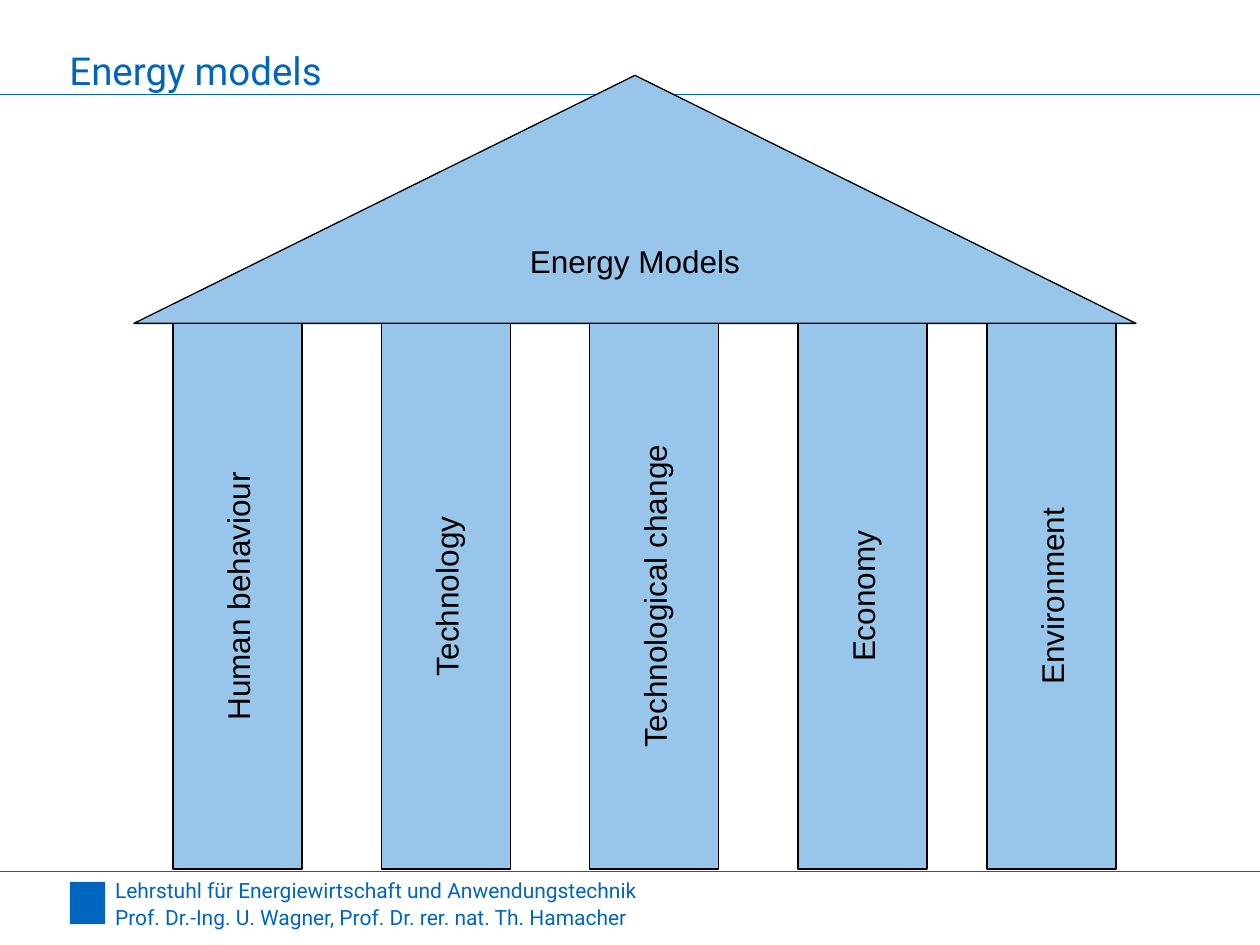
from dataclasses import dataclass

import pptx
import pptx.dml.color
import pptx.enum.shapes
import pptx.enum.text
import pptx.oxml
import pptx.oxml.ns
import pptx.util

Cm = pptx.util.Cm
Shapes = pptx.enum.shapes.MSO_SHAPE
Anchor = pptx.enum.text.MSO_ANCHOR
Align = pptx.enum.text.PP_ALIGN

BLUE = "0065BD"
LIGHT_BLUE = "98C6EA"
BLACK = "000000"
PAGE_WIDTH, PAGE_HEIGHT = 25.4, 19.05


@dataclass
class Pillar:
    label: str
    center: float


PILLAR_LENGTH, PILLAR_WIDTH, PILLAR_MIDDLE = 11.0, 2.6, 12.02
FIRST_CENTER, PILLAR_STEP = 4.79, 4.2
REGULAR_LABELS = ["Human behaviour", "Technology", "Technological change", "Economy"]
PILLARS = [Pillar(label, FIRST_CENTER + index * PILLAR_STEP)
           for index, label in enumerate(REGULAR_LABELS)]
PILLARS.append(Pillar("Environment", 21.2))


def color(value: str) -> pptx.dml.color.RGBColor:
    return pptx.dml.color.RGBColor.from_string(value)


def write_text(shape, text: str, *, font: str, size: float, fill: str,
               align=Align.LEFT, anchor=Anchor.BOTTOM, wrap: bool = True,
               margin: float | None = None, spacing: float = 1.0) -> None:
    """Fill a shape with one paragraph per line of text."""
    frame = shape.text_frame
    frame.text = text
    frame.auto_size = pptx.enum.text.MSO_AUTO_SIZE.NONE
    frame.word_wrap = wrap
    frame.vertical_anchor = anchor
    if margin is not None:
        frame.margin_left = frame.margin_right = Cm(margin)
        frame.margin_top = frame.margin_bottom = Cm(margin)
    for paragraph in frame.paragraphs:
        paragraph.alignment = align
        paragraph.line_spacing = spacing
        for run in paragraph.runs:
            run.font.name = font
            run.font.size = pptx.util.Pt(size)
            run.font.color.rgb = color(fill)


def add_rule(slide, top: float) -> None:
    """Draw a thin line across the whole page."""
    line = slide.shapes.add_connector(
        pptx.enum.shapes.MSO_CONNECTOR.STRAIGHT,
        Cm(0), Cm(top), Cm(PAGE_WIDTH), Cm(top))
    line.line.color.rgb = color(BLUE)
    line.line.width = pptx.util.Pt(0.75)
    properties = line._element.spPr
    properties.append(properties.makeelement(pptx.oxml.ns.qn("a:effectLst"), {}))


def add_block(slide, kind, left: float, top: float, width: float, height: float,
              fill: str, outline: str | None = None):
    shape = slide.shapes.add_shape(kind, Cm(left), Cm(top), Cm(width), Cm(height))
    shape.shadow.inherit = False
    shape.fill.solid()
    shape.fill.fore_color.rgb = color(fill)
    if outline:
        shape.line.color.rgb = color(outline)
        shape.line.width = pptx.util.Pt(0.75)
    else:
        shape.line.fill.background()
    return shape


def add_temple_part(slide, kind, label: str, left: float, top: float,
                    width: float, height: float, rotation: float = 0) -> None:
    shape = add_block(slide, kind, left, top, width, height, LIGHT_BLUE, BLACK)
    shape.rotation = rotation
    write_text(shape, label, font="Arial", size=18, fill=BLACK,
               align=Align.CENTER, anchor=Anchor.MIDDLE, wrap=False)


def main() -> None:
    presentation = pptx.Presentation()
    presentation.slide_width = Cm(PAGE_WIDTH)
    presentation.slide_height = Cm(PAGE_HEIGHT)
    slide = presentation.slides.add_slide(presentation.slide_layouts[5])

    # Title
    title = slide.shapes.title
    title.left, title.top, title.width, title.height = Cm(1.4), Cm(0.18), Cm(20.6), Cm(1.7)
    write_text(title, "Energy models", font="Roboto", size=22, fill=BLUE, margin=0)

    # Header and footer
    add_rule(slide, 1.9)
    add_rule(slide, 17.57)
    add_block(slide, Shapes.RECTANGLE, 1.41, 17.78, 0.71, 0.85, BLUE)
    footer = slide.shapes.add_textbox(Cm(2.32), Cm(17.63), Cm(11.86), Cm(1.12))
    write_text(footer, "Lehrstuhl für Energiewirtschaft und Anwendungstechnik\n"
               "Prof. Dr.-Ing. U. Wagner, Prof. Dr. rer. nat. Th. Hamacher",
               font="Roboto", size=12, fill=BLUE, margin=0, spacing=1.1)

    # Roof
    add_temple_part(slide, Shapes.ISOSCELES_TRIANGLE, "Energy Models", 2.7, 1.52, 20.2, 5)

    # Pillars, turned so that their labels read upwards
    for pillar in PILLARS:
        add_temple_part(slide, Shapes.RECTANGLE, pillar.label,
                        pillar.center - PILLAR_LENGTH / 2,
                        PILLAR_MIDDLE - PILLAR_WIDTH / 2,
                        PILLAR_LENGTH, PILLAR_WIDTH, rotation=270)

    presentation.save("out.pptx")


if __name__ == "__main__":
    main()
